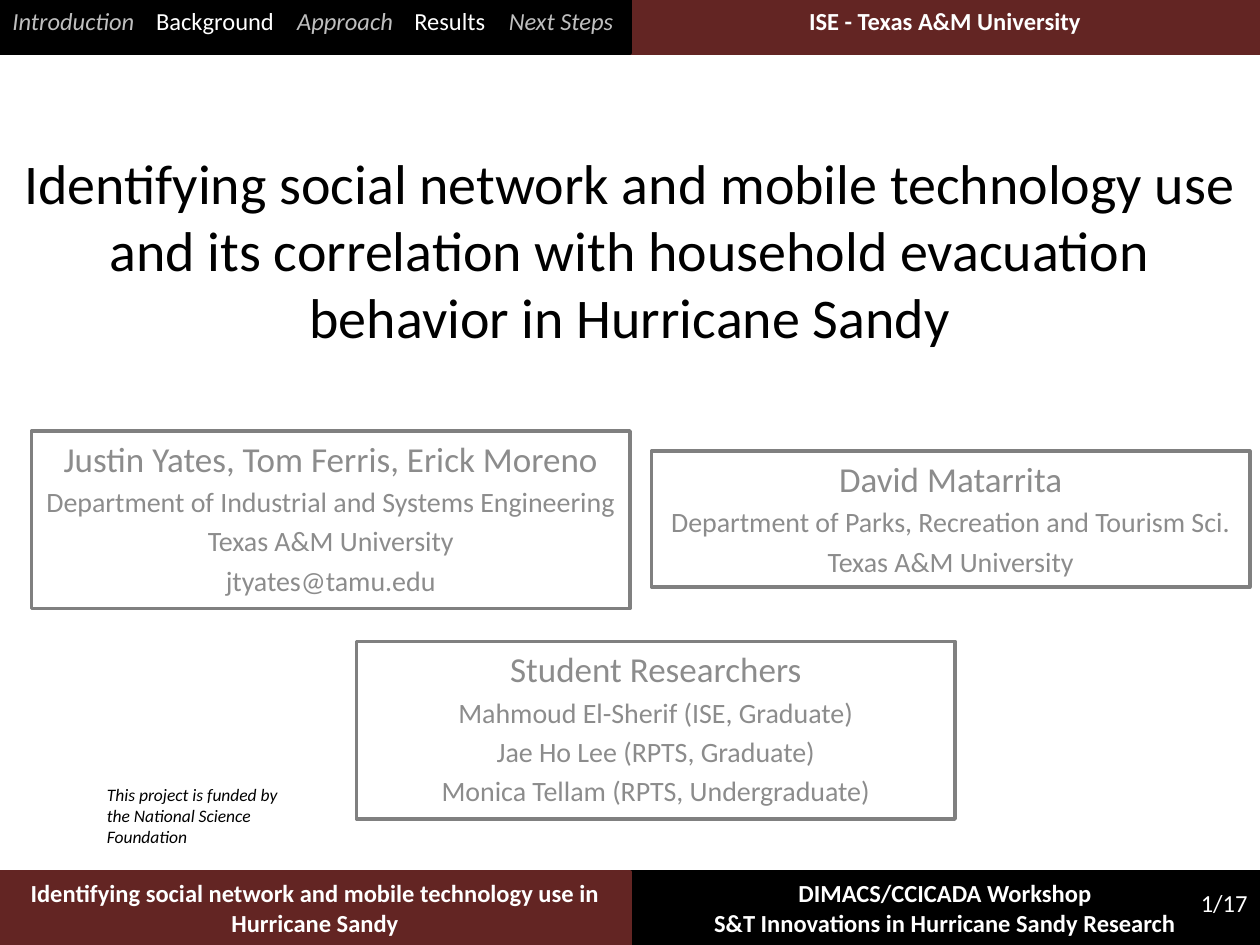
from dataclasses import dataclass

from lxml import etree
from pptx import Presentation
from pptx import util as u
from pptx.dml.color import RGBColor
from pptx.enum import shapes, text
from pptx.oxml.ns import qn

FONT = "Calibri"
BLACK, WHITE, MAROON = "000000", "FFFFFF", "632523"
GRAY_LINE, GRAY_TEXT, FADED = "808080", "8C8C8C", "BFBFBF"
LEFT, CENTER, RIGHT = (text.PP_ALIGN.LEFT, text.PP_ALIGN.CENTER,
                       text.PP_ALIGN.RIGHT)
HALF = 5
FOOTER_TOP, FOOTER_HEIGHT, HEADER_HEIGHT = 6.92, 0.58, 0.42
CARD_WIDTH = 4.75


@dataclass
class Bar:
    left: float
    top: float
    height: float
    color: str


@dataclass
class Label:
    left: float
    top: float
    width: float
    height: float
    lines: list[str]
    align: text.PP_ALIGN = CENTER
    size: int = 14
    color: str = WHITE
    bold: bool = False
    italic: bool = False


@dataclass
class Card:
    left: float
    top: float
    height: float
    heading: str
    details: list[str]


@dataclass
class Section:
    name: str
    start: float
    active: bool


def rgb(color: str) -> RGBColor:
    return RGBColor.from_string(color)


def write(paragraph, words: str, *, size: float, color: str, align=LEFT,
          bold=False, italic=False, before: float = 0) -> None:
    """Add one formatted run to a paragraph."""
    paragraph.alignment = align
    paragraph.space_before = u.Pt(before)
    run = paragraph.add_run()
    run.text = words
    font = run.font
    font.name, font.size = FONT, u.Pt(size)
    font.bold, font.italic = bold, italic
    font.color.rgb = rgb(color)


def next_paragraph(frame, index: int):
    return frame.paragraphs[0] if index == 0 else frame.add_paragraph()


def add_rectangle(slide, left: float, top: float, width: float,
                  height: float, fill: str, line: str):
    box = slide.shapes.add_shape(
        shapes.MSO_SHAPE.RECTANGLE, u.Inches(left), u.Inches(top),
        u.Inches(width), u.Inches(height))
    box.shadow.inherit = False
    box.fill.solid()
    box.fill.fore_color.rgb = rgb(fill)
    box.line.color.rgb = rgb(line)
    box.line.width = u.Pt(2)
    return box


def add_frame(slide, left: float, top: float, width: float, height: float):
    box = slide.shapes.add_textbox(u.Inches(left), u.Inches(top),
                                   u.Inches(width), u.Inches(height))
    box.text_frame.word_wrap = True
    return box.text_frame


def add_label(slide, label: Label) -> None:
    frame = add_frame(slide, label.left, label.top, label.width, label.height)
    for index, line in enumerate(label.lines):
        write(next_paragraph(frame, index), line, size=label.size,
              color=label.color, align=label.align, bold=label.bold,
              italic=label.italic)


def add_card(slide, card: Card) -> None:
    frame = add_rectangle(slide, card.left, card.top, CARD_WIDTH, card.height,
                          WHITE, GRAY_LINE).text_frame
    frame.word_wrap = True
    frame.vertical_anchor = text.MSO_ANCHOR.TOP
    for index, line in enumerate([card.heading, *card.details]):
        size = 20 if index == 0 else 16
        write(next_paragraph(frame, index), line, size=size, color=GRAY_TEXT,
              align=CENTER, before=size * 0.2)


def add_navigation(slide, sections: list[Section]) -> None:
    """Section names on one line, set apart by tab stops."""
    paragraph = add_frame(slide, 0, 0, 5.17, 0.34).paragraphs[0]
    for index, section in enumerate(sections):
        write(paragraph, ("\t" if index else "") + section.name, size=14,
              color=WHITE if section.active else FADED,
              italic=not section.active)
    stops = etree.SubElement(paragraph._p.get_or_add_pPr(), qn("a:tabLst"))
    for section in sections[1:]:
        etree.SubElement(stops, qn("a:tab"), algn="l",
                         pos=str(u.Inches(section.start)))


def add_title(slide, words: str) -> None:
    title = slide.shapes.title
    title.left, title.top = u.Inches(0), u.Inches(1.17)
    title.width, title.height = u.Inches(10), u.Inches(1.61)
    frame = title.text_frame
    frame.word_wrap = True
    frame.auto_size = text.MSO_AUTO_SIZE.NONE
    frame.vertical_anchor = text.MSO_ANCHOR.MIDDLE
    write(frame.paragraphs[0], words, size=32, color=BLACK, align=CENTER)


BARS = [
    Bar(HALF, FOOTER_TOP, FOOTER_HEIGHT, BLACK),
    Bar(0, FOOTER_TOP, FOOTER_HEIGHT, MAROON),
    Bar(HALF, 0, HEADER_HEIGHT, MAROON),
    Bar(0, 0, HEADER_HEIGHT, BLACK),
]
LABELS = [
    Label(9.08, 7, 0.92, 0.34, ["1/17"], align=RIGHT),
    Label(0, FOOTER_TOP, HALF, 0.57,
          ["Identifying social network and mobile technology use in "
           "Hurricane Sandy"], bold=True),
    Label(HALF, FOOTER_TOP, HALF, 0.57,
          ["DIMACS/CCICADA Workshop",
           "S&T Innovations in Hurricane Sandy Research"], bold=True),
    Label(HALF, 0, HALF, 0.34, ["ISE - Texas A&M University"], bold=True),
    Label(0.75, 6.17, 1.75, 0.61,
          ["This project is funded by the National Science Foundation"],
          align=LEFT, size=10, color=BLACK, italic=True),
]
SECTIONS = [
    Section("Introduction", 0, False),
    Section("Background", 1.14, True),
    Section("Approach", 2.26, False),
    Section("Results", 3.19, True),
    Section("Next Steps", 3.94, False),
]
CARDS = [
    Card(0.25, 3.42, 1.41, "Justin Yates, Tom Ferris, Erick Moreno",
         ["Department of Industrial and Systems Engineering",
          "Texas A&M University", "jtyates@tamu.edu"]),
    Card(2.83, 5.09, 1.41, "Student Researchers",
         ["Mahmoud El-Sherif (ISE, Graduate)", "Jae Ho Lee (RPTS, Graduate)",
          "Monica Tellam (RPTS, Undergraduate)"]),
    Card(5.17, 3.58, 1.08, "David Matarrita",
         ["Department of Parks, Recreation and Tourism Sci.",
          "Texas A&M University"]),
]


def main() -> None:
    deck = Presentation()
    deck.slide_width, deck.slide_height = u.Inches(10), u.Inches(7.5)
    slide = deck.slides.add_slide(deck.slide_layouts[5])

    # Header and footer
    for bar in BARS:
        add_rectangle(slide, bar.left, bar.top, HALF, bar.height,
                      bar.color, bar.color)
    for label in LABELS:
        add_label(slide, label)
    add_navigation(slide, SECTIONS)

    # Title and authors
    add_title(slide, "Identifying social network and mobile technology use "
                     "and its correlation with household evacuation "
                     "behavior in Hurricane Sandy")
    for card in CARDS:
        add_card(slide, card)

    deck.save("out.pptx")


if __name__ == "__main__":
    main()
